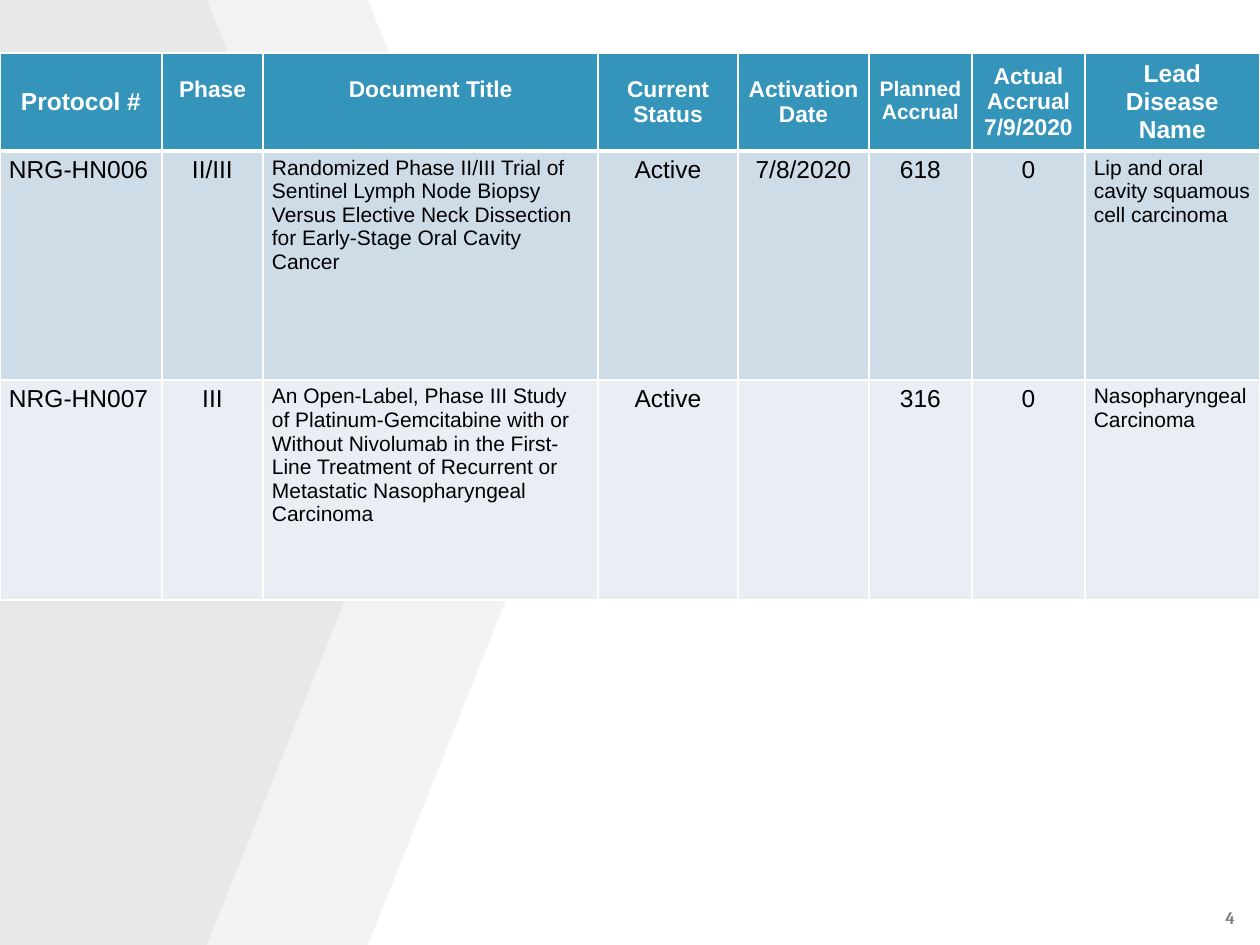
from dataclasses import dataclass

from lxml import etree
from pptx import Presentation
from pptx.dml.color import RGBColor
from pptx.enum.shapes import MSO_SHAPE
from pptx.enum.text import MSO_ANCHOR, PP_ALIGN
from pptx.oxml.ns import qn
from pptx.util import Emu, Pt

LEFT, CENTER, RIGHT = PP_ALIGN.LEFT, PP_ALIGN.CENTER, PP_ALIGN.RIGHT
TOP, MIDDLE = MSO_ANCHOR.TOP, MSO_ANCHOR.MIDDLE
PENTAGON = MSO_SHAPE.PENTAGON
BLANK_LAYOUT = 6


@dataclass(frozen=True)
class Theme:
    header: str = "3494BA"
    bands: tuple = ("CEDCE7", "E8EEF3")
    white: str = "FFFFFF"
    black: str = "000000"
    page_grey: str = "7F7F7F"
    back_arrow: str = "F2F2F2"
    front_arrow: str = "E8E8E8"
    font: str = "Arial"
    page_font: str = "Cambria"
    page_size: int = 10
    small: int = 12
    medium: int = 13
    large: int = 14
    rule: int = 1
    header_rule: int = 3


THEME = Theme()

# heading lines, width in px, heading size, heading anchor, body size, body alignment
COLUMNS = [
    (["Protocol #"], 162, THEME.large, MIDDLE, THEME.large, LEFT),
    (["Phase"], 101, THEME.medium, TOP, THEME.large, CENTER),
    (["Document Title"], 335, THEME.medium, TOP, THEME.small, LEFT),
    (["Current Status"], 140, THEME.medium, TOP, THEME.large, CENTER),
    (["Activation Date"], 131, THEME.medium, TOP, THEME.large, CENTER),
    (["Planned Accrual"], 103, THEME.small, TOP, THEME.large, CENTER),
    (["Actual", "Accrual 7/9/2020"], 113, THEME.medium, MIDDLE, THEME.large, CENTER),
    (["Lead", "Disease", "Name"], 175, THEME.large, MIDDLE, THEME.small, LEFT),
]
PROTOCOLS = [
    ["NRG-HN006", "II/III",
     "Randomized Phase II/III Trial of Sentinel Lymph Node Biopsy Versus "
     "Elective Neck Dissection for Early-Stage Oral Cavity Cancer",
     "Active", "7/8/2020", "618", "0", "Lip and oral cavity squamous cell carcinoma"],
    ["NRG-HN007", "III",
     "An Open-Label, Phase III Study of Platinum-Gemcitabine with or Without "
     "Nivolumab in the First-Line Treatment of Recurrent or Metastatic "
     "Nasopharyngeal Carcinoma",
     "Active", "", "316", "0", "Nasopharyngeal Carcinoma"],
]
ROW_HEIGHTS = [98, 229, 220]


def px(length):
    return Emu(round(length * 914400 / 126))


def rgb(value):
    return RGBColor.from_string(value)


def style_font(font, name, size, color, bold):
    font.name, font.size, font.bold = name, Pt(size), bold
    font.color.rgb = rgb(color)


def set_margins(holder, left, top, right, bottom):
    holder.margin_left, holder.margin_top = px(left), px(top)
    holder.margin_right, holder.margin_bottom = px(right), px(bottom)


def write_lines(frame, lines, align, name, size, color, bold):
    for index, line in enumerate(lines):
        paragraph = frame.paragraphs[0] if index == 0 else frame.add_paragraph()
        paragraph.alignment = align
        style_font(paragraph.font, name, size, color, bold)
        if line:
            run = paragraph.add_run()
            run.text = line
            style_font(run.font, name, size, color, bold)


def set_borders(cell, top, bottom):
    """Draw white borders; top and bottom are line widths in points."""
    properties = cell._tc.get_or_add_tcPr()
    widths = {"L": THEME.rule, "R": THEME.rule, "T": top, "B": bottom}
    for side, width in widths.items():
        line = etree.SubElement(properties, qn(f"a:ln{side}"), w=str(Pt(width)))
        fill = etree.SubElement(line, qn("a:solidFill"))
        etree.SubElement(fill, qn("a:srgbClr"), val=THEME.white)


def fill_cell(cell, color):
    cell.fill.solid()
    cell.fill.fore_color.rgb = rgb(color)


def add_background(slide, left, top, width, height):
    """Two overlapping arrows, the paler one set further right."""
    for offset, color in ((161, THEME.back_arrow), (0, THEME.front_arrow)):
        arrow = slide.shapes.add_shape(
            PENTAGON, px(left + offset), px(top), px(width), px(height))
        arrow.adjustments[0] = 0.478
        arrow.shadow.inherit = False
        arrow.fill.solid()
        arrow.fill.fore_color.rgb = rgb(color)
        arrow.line.fill.background()


def add_protocol_table(slide, left, top):
    widths = [column[1] for column in COLUMNS]
    table = slide.shapes.add_table(
        len(ROW_HEIGHTS), len(COLUMNS), px(left), px(top),
        px(sum(widths)), px(sum(ROW_HEIGHTS))).table
    for row, height in zip(table.rows, ROW_HEIGHTS):
        row.height = px(height)

    for col, (heading, width, head_size, anchor, size, align) in enumerate(COLUMNS):
        table.columns[col].width = px(width)
        cell = table.cell(0, col)
        set_borders(cell, THEME.rule, THEME.header_rule)
        fill_cell(cell, THEME.header)
        set_margins(cell, 9, 24 if anchor == TOP else 0, 9, 0)
        cell.vertical_anchor = anchor
        write_lines(cell.text_frame, heading, CENTER,
                    THEME.font, head_size, THEME.white, True)

        for row, (protocol, band) in enumerate(zip(PROTOCOLS, THEME.bands), start=1):
            cell = table.cell(row, col)
            set_borders(cell, THEME.header_rule if row == 1 else THEME.rule, THEME.rule)
            fill_cell(cell, band)
            set_margins(cell, 9, 5, 9, 5)
            write_lines(cell.text_frame, [protocol[col]], align,
                        THEME.font, size, THEME.black, False)


def add_page_number(slide, left, top, width, height):
    frame = slide.shapes.add_textbox(
        px(left), px(top), px(width), px(height)).text_frame
    frame.word_wrap = True
    set_margins(frame, 0, 0, 0, 0)
    write_lines(frame, ["4"], RIGHT, THEME.page_font, THEME.page_size,
                THEME.page_grey, True)


def main():
    prs = Presentation()
    prs.slide_width, prs.slide_height = px(1260), px(945)
    slide = prs.slides.add_slide(prs.slide_layouts[BLANK_LAYOUT])
    add_background(slide, 0, 0, 396, 945)
    add_protocol_table(slide, 0, 53)
    add_page_number(slide, 1192, 907, 43, 25)
    prs.save("out.pptx")


if __name__ == "__main__":
    main()
